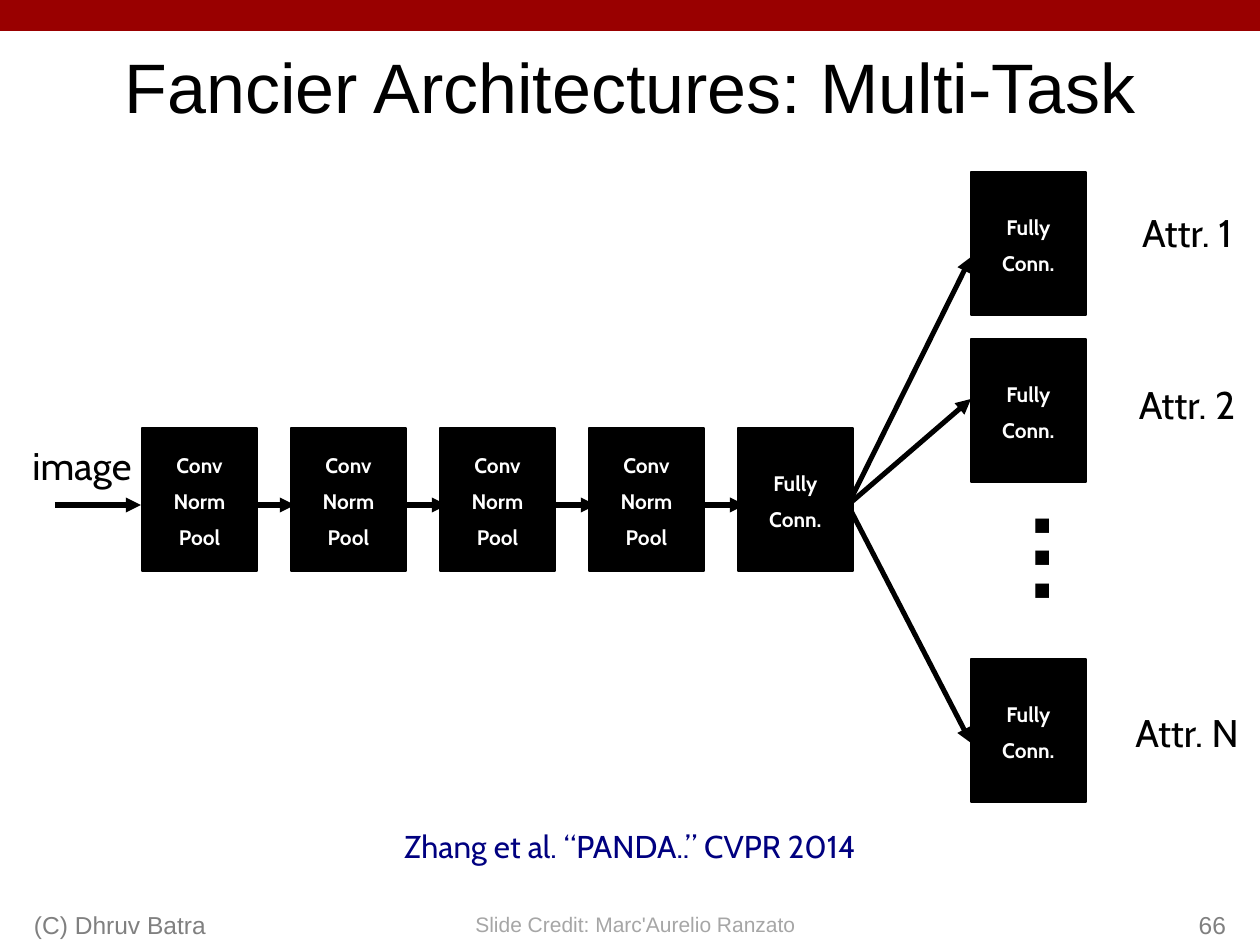
from dataclasses import dataclass

from lxml.etree import SubElement
from pptx import Presentation
from pptx.dml.color import RGBColor
from pptx.enum.shapes import MSO_CONNECTOR, MSO_SHAPE
from pptx.enum.text import MSO_ANCHOR, MSO_AUTO_SIZE, PP_ALIGN
from pptx.oxml.ns import qn
from pptx.util import Emu, Pt

EMU_PER_PX = 914400 / 126


@dataclass(frozen=True)
class Theme:
    ink: str = "000000"
    paper: str = "FFFFFF"
    banner: str = "990000"
    citation: str = "000080"
    footer: str = "808080"
    credit: str = "A6A6A6"
    diagram_font: str = "Cabin"
    page_font: str = "Arial"
    title_size: int = 40
    dots_size: int = 91
    label_size: int = 22
    citation_size: int = 18
    footer_size: int = 14
    layer_size: int = 12
    arrow_width: float = 2.9
    outline_width: float = 0.75


@dataclass(frozen=True)
class Box:
    left: int
    top: int
    width: int
    height: int


@dataclass(frozen=True)
class Layer:
    left: int
    top: int
    words: tuple[str, ...]


@dataclass(frozen=True)
class Arrow:
    start: tuple[int, int]
    end: tuple[int, int]


@dataclass(frozen=True)
class Label:
    text: str
    box: Box
    size: int
    color: str
    font: str
    align: PP_ALIGN = PP_ALIGN.CENTER
    anchor: MSO_ANCHOR = MSO_ANCHOR.TOP
    wrap: bool = True
    insets: tuple[int, int, int, int] = (13, 6, 13, 6)  # left, top, right, bottom
    rotation: int = 0


THEME = Theme()


def px(length: int) -> Emu:
    return Emu(round(length * EMU_PER_PX))


def place(box: Box) -> tuple[Emu, ...]:
    return tuple(px(n) for n in (box.left, box.top, box.width, box.height))


def apply(target, values: dict) -> None:
    for name, value in values.items():
        setattr(target, name, value)


def write(frame, lines: tuple[str, ...], font: dict, color: str, align: PP_ALIGN) -> None:
    for index, line in enumerate(lines):
        paragraph = frame.paragraphs[0] if index == 0 else frame.add_paragraph()
        paragraph.alignment = align
        if index:
            paragraph.space_before = Pt(THEME.layer_size / 2)
        run = paragraph.add_run()
        run.text = line
        apply(run.font, font)
        run.font.color.rgb = RGBColor.from_string(color)


def format_frame(frame, insets: tuple[int, int, int, int], anchor: MSO_ANCHOR, wrap: bool) -> None:
    left, top, right, bottom = map(px, insets)
    apply(frame, {
        "margin_left": left, "margin_top": top,
        "margin_right": right, "margin_bottom": bottom,
        "vertical_anchor": anchor, "word_wrap": wrap,
        "auto_size": MSO_AUTO_SIZE.NONE,
    })


def draw_block(slide, box: Box, color: str):
    block = slide.shapes.add_shape(MSO_SHAPE.RECTANGLE, *place(box))
    block.shadow.inherit = False
    block.fill.solid()
    block.fill.fore_color.rgb = RGBColor.from_string(color)
    block.line.fill.background()
    return block


def draw_layer(slide, layer: Layer) -> None:
    block = draw_block(slide, Box(layer.left, layer.top, LAYER_WIDTH, LAYER_HEIGHT), THEME.ink)
    block.line.color.rgb = RGBColor.from_string(THEME.ink)
    block.line.width = Pt(THEME.outline_width)
    format_frame(block.text_frame, (11, 8, 11, 5), MSO_ANCHOR.MIDDLE, False)
    font = {"name": THEME.diagram_font, "size": Pt(THEME.layer_size), "bold": True}
    write(block.text_frame, layer.words, font, THEME.paper, PP_ALIGN.CENTER)


def draw_arrow(slide, arrow: Arrow) -> None:
    ends = (px(n) for n in (*arrow.start, *arrow.end))
    connector = slide.shapes.add_connector(MSO_CONNECTOR.STRAIGHT, *ends)
    connector.line.color.rgb = RGBColor.from_string(THEME.ink)
    connector.line.width = Pt(THEME.arrow_width)
    SubElement(connector.line._get_or_add_ln(), qn("a:tailEnd"), type="triangle")
    SubElement(connector._element.spPr, qn("a:effectLst"))


def draw_label(slide, label: Label) -> None:
    text_box = slide.shapes.add_textbox(*place(label.box))
    text_box.rotation = label.rotation
    format_frame(text_box.text_frame, label.insets, label.anchor, label.wrap)
    font = {"name": label.font, "size": Pt(label.size)}
    write(text_box.text_frame, (label.text,), font, label.color, label.align)


# Layout of the network
LAYER_WIDTH, LAYER_HEIGHT = 115, 143
TRUNK_LEFT, TRUNK_TOP, TRUNK_PITCH = 142, 428, 149
HEAD_LEFT = 971
FLOW_Y, FLOW_LENGTH = 505, 86
CONV, FULL = ("Conv", "Norm", "Pool"), ("Fully", "Conn.")

trunk = [Layer(TRUNK_LEFT + i * TRUNK_PITCH, TRUNK_TOP, words)
         for i, words in enumerate([CONV] * 4 + [FULL])]
heads = [Layer(HEAD_LEFT, top, FULL) for top in (172, 339, 659)]
trunk_arrows = [Arrow((x, FLOW_Y), (x + FLOW_LENGTH, FLOW_Y)) for x in (209, 361, 510, 659)]
image_arrow = Arrow((55, FLOW_Y), (55 + FLOW_LENGTH, FLOW_Y))
head_arrows = [Arrow((848, FLOW_Y), (HEAD_LEFT, y)) for y in (257, 399, 743)]

# Wording around the network
diagram_labels = [
    Label(text, Box(left, top, 146, 54), THEME.label_size, THEME.ink,
          THEME.diagram_font, insets=(11, 9, 11, 5))
    for text, left, top in (("Attr. 1", 1114, 200), ("Attr. 2", 1114, 372),
                            ("Attr. N", 1114, 700), ("image", 9, 433))
]
dots = Label("...", Box(883, 464, 171, 189), THEME.dots_size, THEME.ink,
             THEME.diagram_font, insets=(11, 16, 11, 5), rotation=270)
citation = Label("Zhang et al. “PANDA..” CVPR 2014", Box(5, 819, 1250, 47),
                 THEME.citation_size, THEME.citation, THEME.diagram_font,
                 insets=(11, 8, 11, 5))
title = Label("Fancier Architectures: Multi-Task", Box(0, 31, 1260, 95),
              THEME.title_size, THEME.ink, THEME.page_font, insets=(13, 12, 13, 0))
credit = Label("Slide Credit: Marc'Aurelio Ranzato", Box(461, 906, 349, 38),
               THEME.layer_size, THEME.credit, THEME.page_font, wrap=False)
footers = [
    Label(text, Box(left, 882, width, 63), THEME.footer_size, THEME.footer,
          THEME.page_font, align=align, anchor=MSO_ANCHOR.BOTTOM)
    for text, left, width, align in (("(C) Dhruv Batra", 21, 400, PP_ALIGN.LEFT),
                                     ("66", 977, 262, PP_ALIGN.RIGHT))
]


def main() -> None:
    deck = Presentation()
    apply(deck, {"slide_width": px(1260), "slide_height": px(945)})
    slide = deck.slides.add_slide(deck.slide_layouts[6])

    # Banner
    draw_block(slide, Box(0, 0, 1260, 31), THEME.banner)

    # Network: trunk arrows run behind the layers, the others in front
    for arrow in trunk_arrows:
        draw_arrow(slide, arrow)
    for layer in trunk + heads:
        draw_layer(slide, layer)
    for arrow in [image_arrow, *head_arrows]:
        draw_arrow(slide, arrow)

    # Text
    for label in [citation, dots, *diagram_labels, title, credit, *footers]:
        draw_label(slide, label)

    deck.save("out.pptx")


if __name__ == "__main__":
    main()
